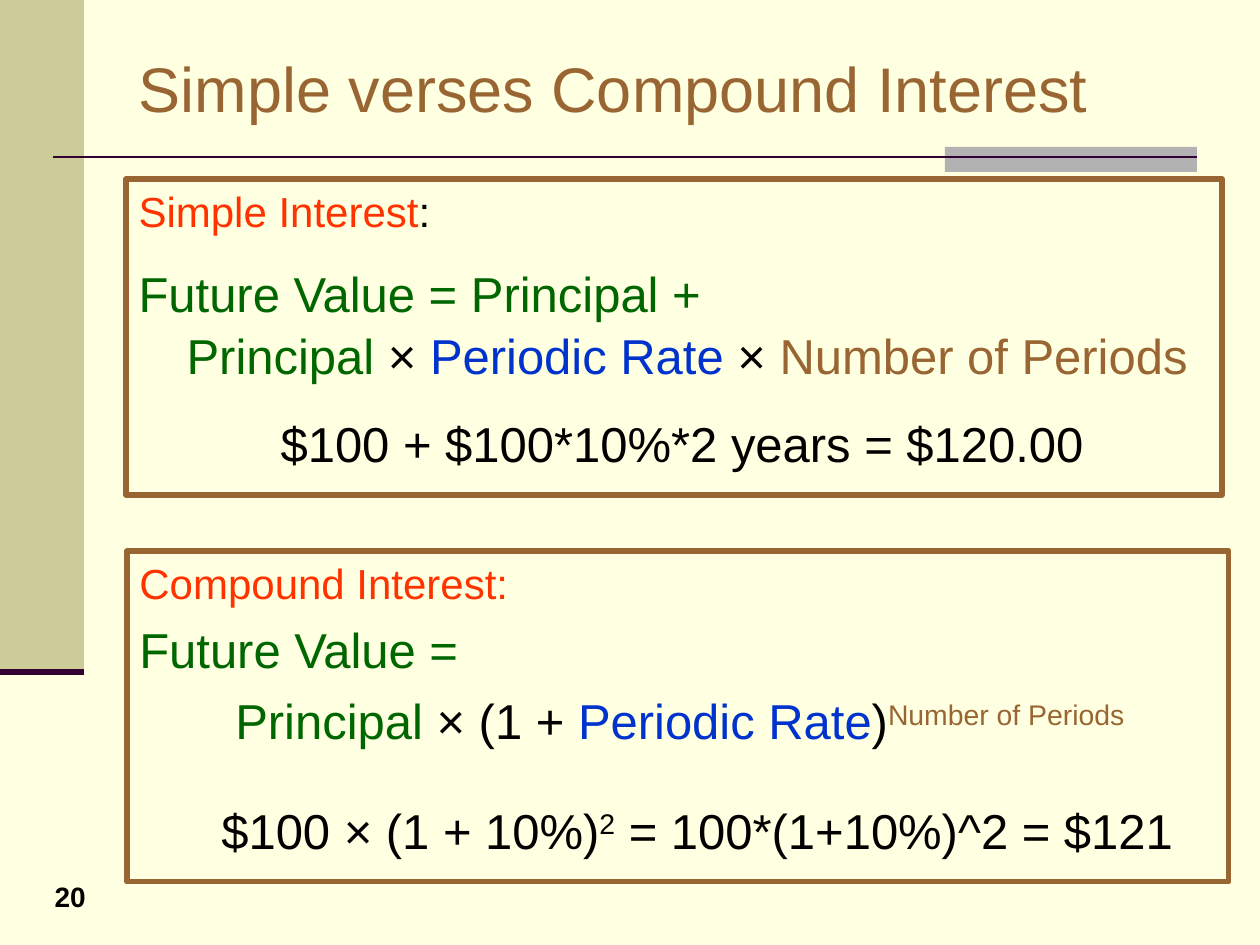
from pptx import Presentation
from pptx.dml.color import RGBColor as RGB
from pptx.enum.shapes import MSO_CONNECTOR as Conn, MSO_SHAPE as Geo
from pptx.enum.text import MSO_ANCHOR as Anchor, MSO_AUTO_SIZE as Auto, PP_ALIGN as Align
from pptx.oxml.ns import qn
from pptx.util import Pt
from lxml.etree import SubElement

PX = 914400 // 126  # EMU in one px

theme = dict(
    font="Arial", title=36, head=24, body=28, page=16,
    back="FFFFE1", side="CCCC99", bar="B2B2B2", rule="330033",
    brown="996633", red="FF3300", green="006600", blue="0033CC", black="000000",
)


def color(name):
    return RGB.from_string(theme[name])


def style(para, size, tint=None):
    para.font.name = theme["font"]
    para.font.size = Pt(theme[size])
    if tint:
        para.font.color.rgb = color(tint)


deck = Presentation()
deck.slide_width, deck.slide_height = 1260 * PX, 945 * PX
slide = deck.slides.add_slide(deck.slide_layouts[1])
shapes = slide.shapes
slide.background.fill.solid()
slide.background.fill.fore_color.rgb = color("back")
title, simple = slide.placeholders

# Side band and accent bar
for x, y, w, h, tint in [(0, 0, 84, 672, "side"), (945, 147, 252, 25, "bar")]:
    rect = shapes.add_shape(Geo.RECTANGLE, x * PX, y * PX, w * PX, h * PX)
    rect.shadow.inherit = False
    rect.fill.solid()
    rect.fill.fore_color.rgb = color(tint)
    rect.line.fill.background()

# Rules under the title and the band
for x, end, y, width in [(53, 1197, 157, 1.5), (0, 84, 672, 3.5)]:
    rule = shapes.add_connector(Conn.STRAIGHT, x * PX, y * PX, end * PX, y * PX)
    rule.line.color.rgb = color("rule")
    rule.line.width = Pt(width)
    SubElement(rule._element.spPr, qn("a:effectLst"))

# Title
title.left, title.top, title.width, title.height = 126 * PX, 38 * PX, 1071 * PX, 98 * PX
title.text_frame.text = "Simple verses Compound Interest"
title.text_frame.auto_size = Auto.NONE
title.text_frame.vertical_anchor = Anchor.MIDDLE
para = title.text_frame.paragraphs[0]
para.alignment = Align.LEFT
style(para, "title", "brown")

# Page number
page = shapes.add_textbox(26 * PX, 873 * PX, 72 * PX, 42 * PX)
para = page.text_frame.paragraphs[0]
para.text = "20"
para.alignment = Align.RIGHT
para.font.bold = True
style(para, "page", "black")

# Formula boxes; each line: size, indent px, space before pt, runs (text, colour, raised)
compound = shapes.add_textbox(0, 0, PX, PX)
boxes = [
    (simple, (126, 179, 1096, 316), [
        ("head", 0, 3, [("Simple Interest", "red"), (":", "black")]),
        ("body", 0, 16, [("Future Value = Principal +", "green")]),
        ("body", 48, 1.5, [("Principal ", "green"), ("× ", "black"),
                           ("Periodic Rate ", "blue"), ("× ", "black"),
                           ("Number of Periods", "brown")]),
        ("body", 142, 17, [("$100 + $100*10%*2 years = $120.00", "black")]),
    ]),
    (compound, (127, 551, 1102, 331), [
        ("head", 0, 3, [("Compound Interest:", "red")]),
        ("body", 0, 7, [("Future Value =", "green")]),
        ("body", 96, 7, [("Principal ", "green"), ("× (1 + ", "black"),
                         ("Periodic Rate", "blue"), (")", "black"),
                         ("Number of Periods", "brown", True)]),
        ("body", 82, 29, [("$100 × (1 + 10%)", "black"), ("2", "black", True),
                          (" = 100*(1+10%)^2 = $121", "black")]),
    ]),
]
for box, (x, y, w, h), lines in boxes:
    box.left, box.top, box.width, box.height = x * PX, y * PX, w * PX, h * PX
    box.line.color.rgb = color("brown")
    box.line.width = Pt(3)
    frame = box.text_frame
    frame.word_wrap = True
    frame.auto_size = Auto.NONE
    frame.vertical_anchor = Anchor.TOP
    for i, (size, indent, gap, runs) in enumerate(lines):
        para = frame.add_paragraph() if i else frame.paragraphs[0]
        para.space_before = Pt(gap)
        props = para._p.get_or_add_pPr()
        props.set("marL", str(indent * PX))
        props.set("indent", "0")
        SubElement(props, qn("a:buNone"))
        style(para, size)
        for text, tint, *raised in runs:
            run = para.add_run()
            run.text = text
            run.font.color.rgb = color(tint)
            if raised:
                run.font._element.set("baseline", "30000")

deck.save("out.pptx")
